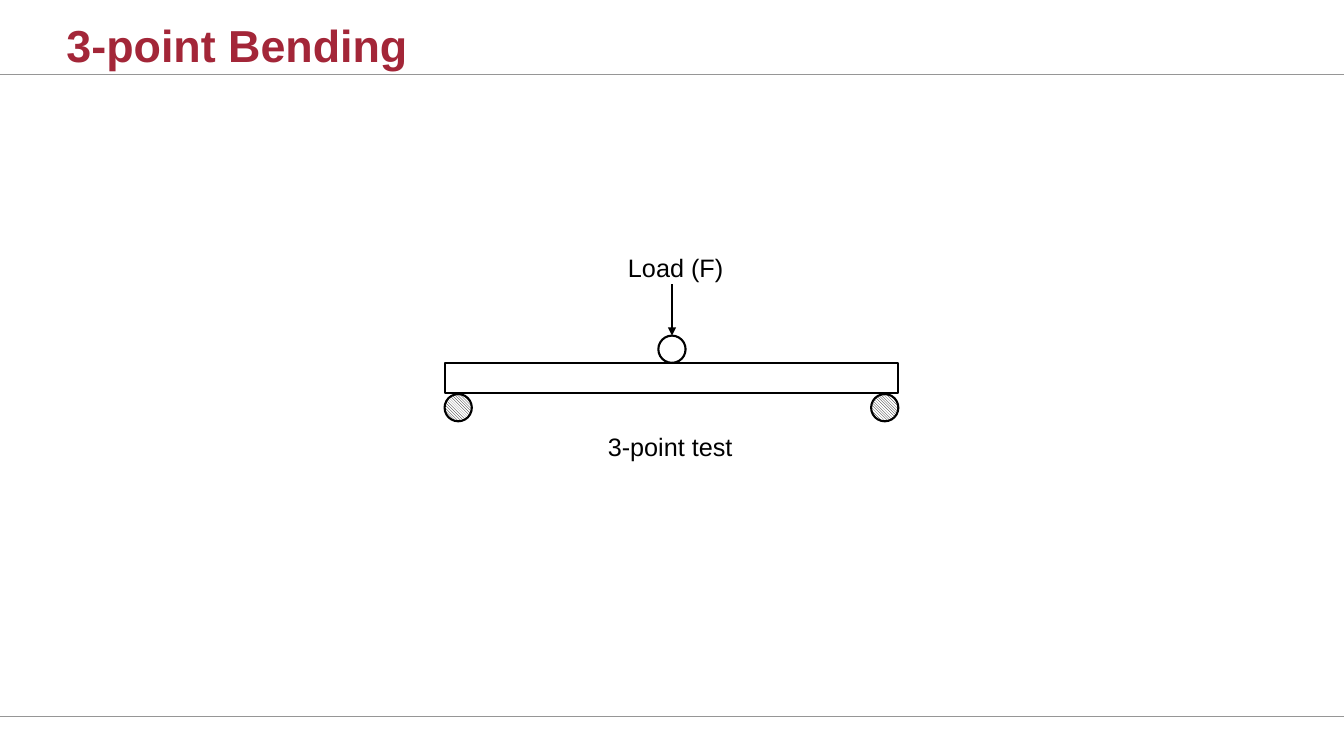
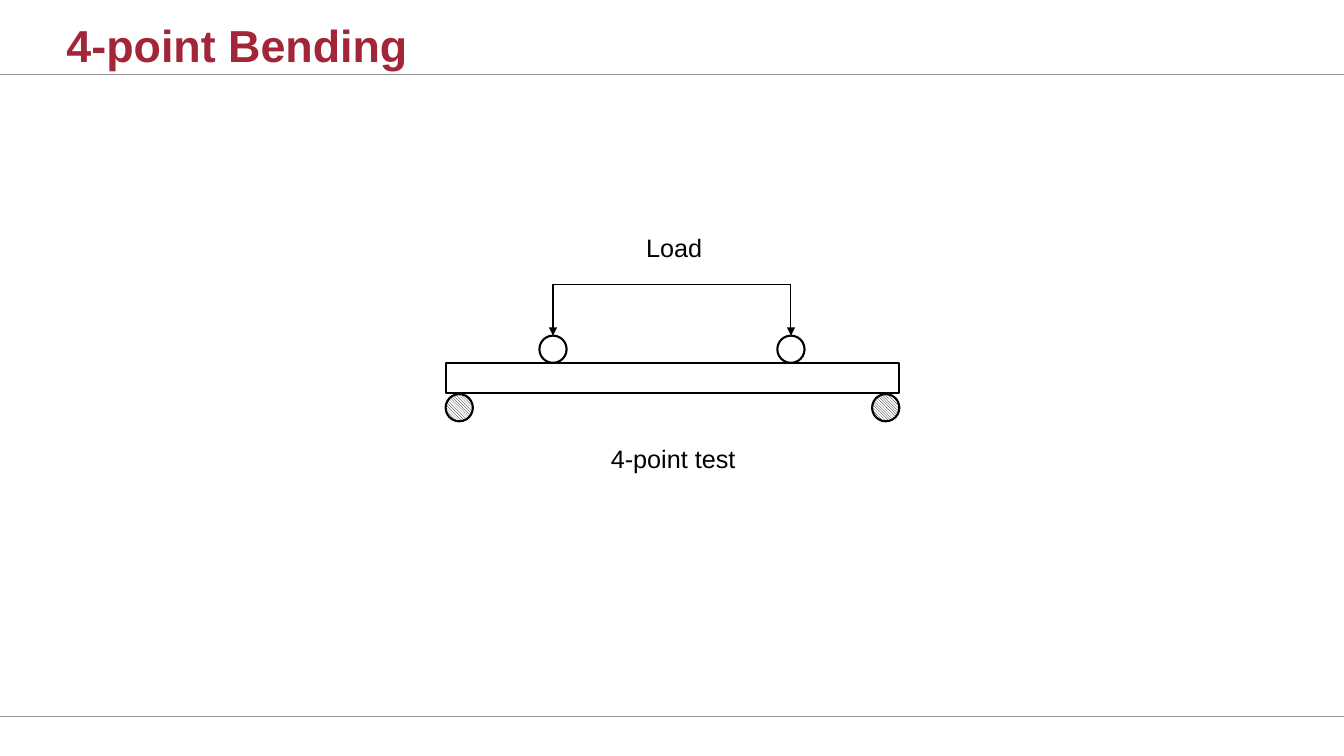
from lxml import etree
from pptx import Presentation
from pptx.dml.color import RGBColor
from pptx.enum.dml import MSO_PATTERN
from pptx.enum.shapes import MSO_CONNECTOR, MSO_SHAPE
from pptx.enum.text import MSO_ANCHOR
from pptx.oxml.ns import qn
from pptx.util import Inches, Pt

# Content: labels are (text, left, top, width)
SLIDES = [
    {
        "title": "3-point Bending",
        "beam_left": 4.41,
        "rollers": [6.53],
        "labels": [("3-point test", 5.93, 4.23, 1.48), ("Load (F)", 6.13, 2.45, 1.25)],
    },
    {
        "title": "4-point Bending",
        "beam_left": 4.42,
        "rollers": [5.35, 7.71],
        "labels": [("4-point test", 5.96, 4.35, 1.47), ("Load", 6.31, 2.26, 0.77)],
    },
]

# Shared style
CRIMSON = RGBColor(0xA3, 0x26, 0x38)
GRAY = RGBColor(0x96, 0x96, 0x96)
BLACK = RGBColor(0, 0, 0)
WHITE = RGBColor(0xFF, 0xFF, 0xFF)
TITLE_FONT = {"name": "Arial", "size": Pt(32), "bold": True}
LABEL_FONT = {"name": "Arial", "size": Pt(18), "bold": False}

# Shared geometry, in inches
SLIDE_WIDTH, SLIDE_HEIGHT = 13.33, 7.5
RULE_TOPS = (7.11, 0.74)
BEAM_TOP, BEAM_WIDTH, BEAM_HEIGHT = 3.6, 4.5, 0.3
DIAMETER = 0.27
SUPPORT_TOP = 3.91
ROLLER_TOP = BEAM_TOP - DIAMETER
LOAD_TOP = 2.82


def add_text(page, text, place, font, color):
    box = page.shapes.add_textbox(*map(Inches, place))
    frame = box.text_frame
    frame.word_wrap = False
    span = frame.paragraphs[0].add_run()
    span.text = text
    for name, value in font.items():
        setattr(span.font, name, value)
    span.font.color.rgb = color
    return frame


def add_line(page, start, end, color, width, arrow=False):
    line = page.shapes.add_connector(
        MSO_CONNECTOR.STRAIGHT, *map(Inches, (*start, *end)))
    line.line.color.rgb = color
    line.line.width = Pt(width)
    properties = line._element.spPr
    if arrow:
        outline = properties.find(qn("a:ln"))
        etree.SubElement(outline, qn("a:tailEnd"), type="triangle")
    etree.SubElement(properties, qn("a:effectLst"))
    return line


def add_part(page, kind, left, top, width, height, hatched=False):
    part = page.shapes.add_shape(kind, *map(Inches, (left, top, width, height)))
    part.shadow.inherit = False
    part.line.color.rgb = BLACK
    part.line.width = Pt(1.5)
    if hatched:
        part.fill.patterned()
        part.fill.pattern = MSO_PATTERN.DARK_DOWNWARD_DIAGONAL
        part.fill.fore_color.rgb = BLACK
        part.fill.back_color.rgb = WHITE
    else:
        part.fill.background()
    return part


def add_frame(page, title):
    for top in RULE_TOPS:
        add_line(page, (0, top), (SLIDE_WIDTH, top), GRAY, 1)
    frame = add_text(page, title, (0.66, 0.1, 12, 0.61), TITLE_FONT, CRIMSON)
    frame.word_wrap = True
    frame.vertical_anchor = MSO_ANCHOR.BOTTOM
    for side in ("left", "top", "right", "bottom"):
        setattr(frame, f"margin_{side}", 0)


def add_bending_test(page, beam_left, rollers, labels):
    # Beam on two hatched supports
    add_part(page, MSO_SHAPE.RECTANGLE, beam_left, BEAM_TOP, BEAM_WIDTH, BEAM_HEIGHT)
    for left in (beam_left, beam_left + BEAM_WIDTH - DIAMETER):
        add_part(page, MSO_SHAPE.OVAL, left, SUPPORT_TOP, DIAMETER, DIAMETER, hatched=True)

    # Loading rollers, each with its arrow
    centers = [left + DIAMETER / 2 for left in rollers]
    for left, center in zip(rollers, centers):
        roller = add_part(page, MSO_SHAPE.OVAL, left, ROLLER_TOP, DIAMETER, DIAMETER)
        arrow = add_line(page, (center, LOAD_TOP), (center, ROLLER_TOP), BLACK, 0.75, arrow=True)
        arrow.end_connect(roller, 0)

    # Bar that shares the load between rollers
    if len(centers) > 1:
        add_line(page, (centers[0], LOAD_TOP), (centers[-1], LOAD_TOP), BLACK, 0.75)

    for text, left, top, width in labels:
        add_text(page, text, (left, top, width, 0.4), LABEL_FONT, BLACK)


def main():
    deck = Presentation()
    deck.slide_width = Inches(SLIDE_WIDTH)
    deck.slide_height = Inches(SLIDE_HEIGHT)
    for content in SLIDES:
        page = deck.slides.add_slide(deck.slide_layouts[6])
        add_frame(page, content["title"])
        add_bending_test(page, content["beam_left"], content["rollers"], content["labels"])
    deck.save("out.pptx")


if __name__ == "__main__":
    main()
